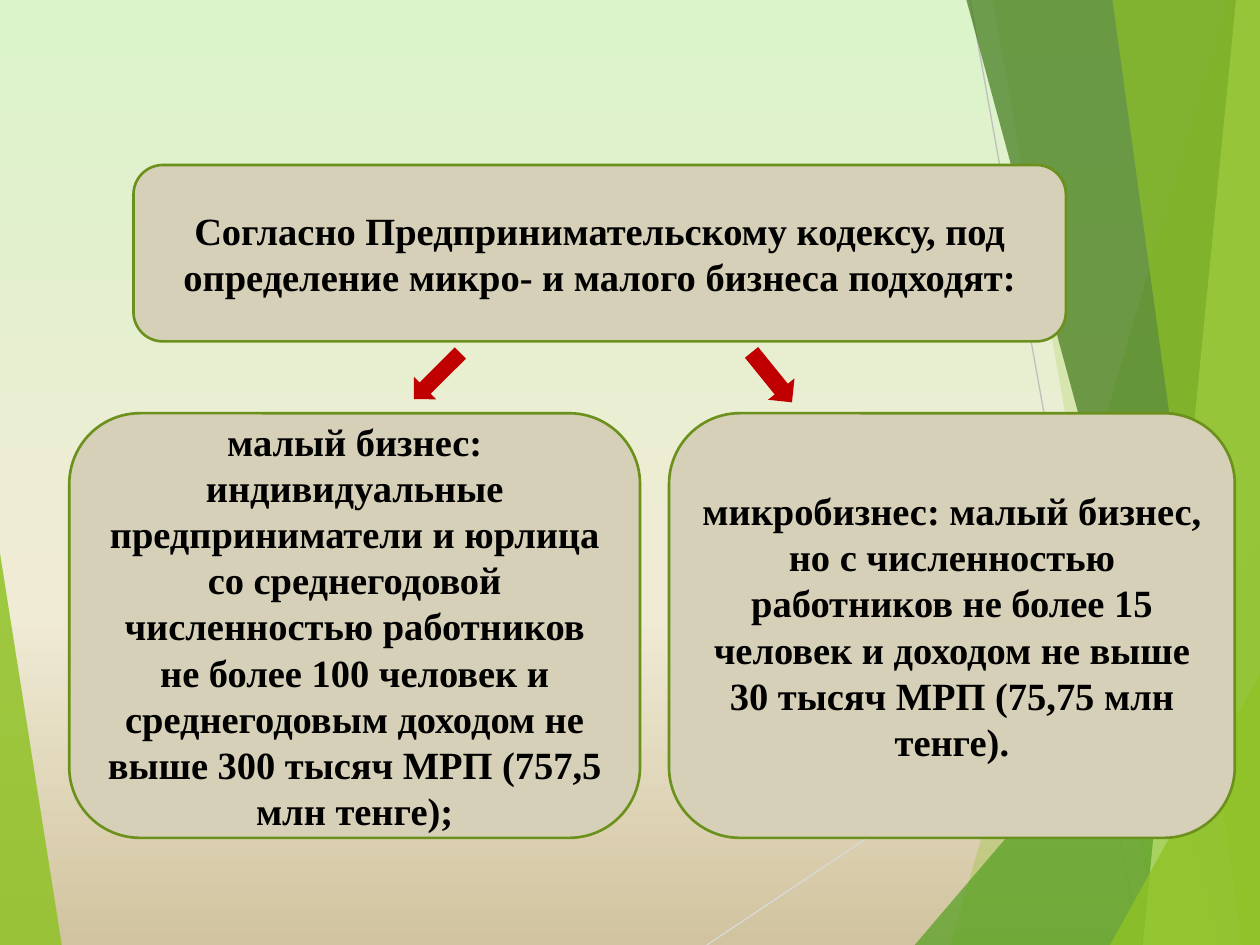
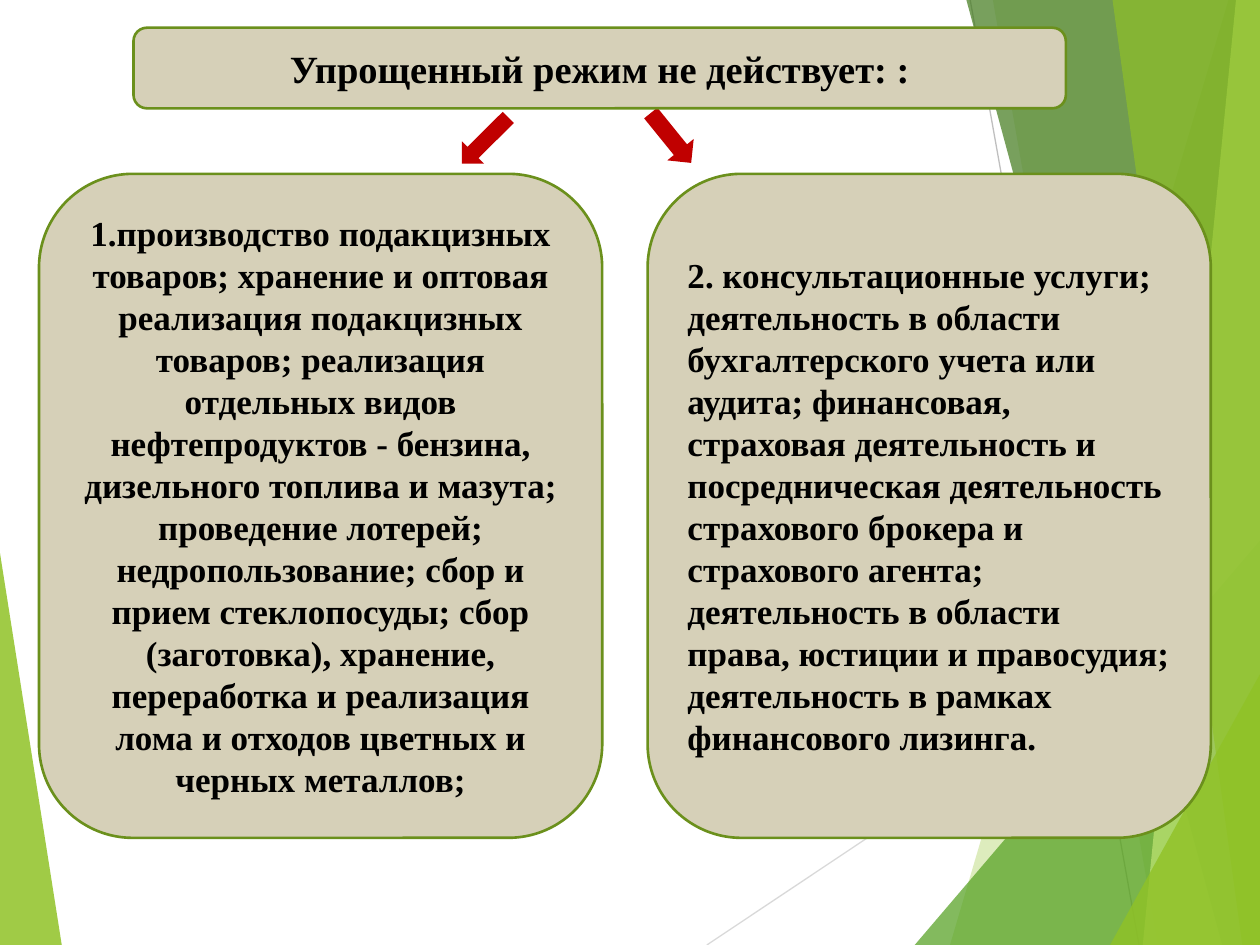
from lxml import etree
from pptx import Presentation, util as u
from pptx.dml.color import RGBColor
from pptx.enum import shapes, text
from pptx.oxml import ns

SLIDE_W, SLIDE_H = 10, 7.5
LIME = RGBColor(0x90, 0xC2, 0x26)
PALE_LIME = RGBColor(0xC0, 0xE4, 0x74)
GREEN = RGBColor(0x54, 0xA0, 0x21)
DARK_GREEN = RGBColor(0x3F, 0x78, 0x19)
LIGHT_GREY = RGBColor(0xD9, 0xD9, 0xD9)
GREY = RGBColor(0xBF, 0xBF, 0xBF)
SAND = RGBColor(0xD6, 0xD0, 0xB8)
OLIVE = RGBColor(0x6B, 0x90, 0x1C)
RED = RGBColor(0xC0, 0x00, 0x00)
BLACK = RGBColor(0x00, 0x00, 0x00)
WHITE = RGBColor(0xFF, 0xFF, 0xFF)
MEADOW = [
    (0, RGBColor(0xDB, 0xF4, 0xCA)),
    (0.65, RGBColor(0xF0, 0xEB, 0xD5)),
    (1, RGBColor(0xD1, 0xC3, 0x9F)),
]

BODY_FONT = {"name": "Times New Roman", "bold": True}
HEADING_SIZE = 22
HEADING_LEFT, HEADING_WIDTH = 1.06, 7.4
PANEL_BOTTOM = 6.65
CENTER, LEFT = text.PP_ALIGN.CENTER, text.PP_ALIGN.LEFT

LEFT_WEDGE = ([(0, 4.39), (0.49, SLIDE_H), (0, SLIDE_H)], LIME, 85)
RAYS = [
    ((5.61, SLIDE_H), (SLIDE_W, 4.57), LIGHT_GREY),
    ((7.7, 0), (9.04, SLIDE_H), GREY),
]
RIGHT_RIBBONS = [
    (9.75, 7.54, LIME, 30),
    (7.88, 9.19, LIME, 20),
    ((4.29), 7.26, GREEN, 72),
    (7.67, 9.7, DARK_GREEN, 70),
    (9.81, 9.07, PALE_LIME, 70),
    (8.83, 9.86, LIME, 65),
    (5.35, 8.81, LIME, 80),
]


def ribbon_outline(start, foot):
    """Return a right-edge band from the top, or a wedge if start is a height on the edge."""
    corner = (SLIDE_W, SLIDE_H)
    if start < SLIDE_H - 1.5:
        return [(SLIDE_W, start), corner, (foot, SLIDE_H)]
    return [(start, 0), (SLIDE_W, 0), corner, (foot, SLIDE_H)]


def paint(shape, color):
    """Give a shape a flat fill without outline or shadow."""
    shape.shadow.inherit = False
    shape.fill.solid()
    shape.fill.fore_color.rgb = color
    shape.line.fill.background()


def add_ribbon(slide, outline, color, opacity):
    """Draw a translucent polygon."""
    corners = [(u.Inches(x), u.Inches(y)) for x, y in outline]
    builder = slide.shapes.build_freeform(*corners[0])
    builder.add_line_segments(corners[1:], close=True)
    ribbon = builder.convert_to_shape()
    paint(ribbon, color)
    tint = ribbon.element.spPr.find(".//" + ns.qn("a:srgbClr"))
    etree.SubElement(tint, ns.qn("a:alpha"), val=str(opacity * 1000))


def add_ray(slide, start, end, color):
    """Draw a thin straight line."""
    ends = [u.Inches(value) for value in (*start, *end)]
    ray = slide.shapes.add_connector(shapes.MSO_CONNECTOR.STRAIGHT, *ends)
    ray.line.color.rgb = color
    ray.line.width = u.Pt(0.75)
    etree.SubElement(ray.element.spPr, ns.qn("a:effectLst"))


def add_decor(slide):
    """Draw the rays and green ribbons shared by all slides."""
    add_ribbon(slide, *LEFT_WEDGE)
    for ray in RAYS:
        add_ray(slide, *ray)
    for start, foot, color, opacity in RIGHT_RIBBONS:
        add_ribbon(slide, ribbon_outline(start, foot), color, opacity)


def add_meadow_background(slide):
    """Fill the background with a vertical three-colour gradient."""
    fill = slide.background.fill
    fill.gradient()
    fill.gradient_angle = 270
    stop_list = slide.element.find(".//" + ns.qn("a:gsLst"))
    etree.SubElement(stop_list, ns.qn("a:gs"), pos="100000")
    for stop, (position, color) in zip(fill.gradient_stops, MEADOW):
        stop.position = position
        stop.color.rgb = color


def add_plain_background(slide):
    """Fill the background with white."""
    slide.background.fill.solid()
    slide.background.fill.fore_color.rgb = WHITE


def add_panel(slide, box, wording, size=HEADING_SIZE, align=CENTER):
    """Draw a rounded sand panel with bold text."""
    panel = slide.shapes.add_shape(
        shapes.MSO_SHAPE.ROUNDED_RECTANGLE, *map(u.Inches, box))
    paint(panel, SAND)
    panel.line.color.rgb = OLIVE
    panel.line.width = u.Pt(1.5)
    frame = panel.text_frame
    frame.word_wrap = True
    frame.vertical_anchor = text.MSO_ANCHOR.MIDDLE
    paragraph = frame.paragraphs[0]
    paragraph.alignment = align
    run = paragraph.add_run()
    run.text = wording
    for attribute, value in {**BODY_FONT, "size": u.Pt(size)}.items():
        setattr(run.font, attribute, value)
    run.font.color.rgb = BLACK


def add_arrow(slide, box, rotation):
    """Draw a red arrow turned towards a panel."""
    arrow = slide.shapes.add_shape(
        shapes.MSO_SHAPE.LEFT_ARROW, *map(u.Inches, box))
    paint(arrow, RED)
    arrow.rotation = rotation


def add_split(slide, heading, heading_span, panel_top, panels, arrow_spots, size):
    """Lay out a heading with two arrows leading to two panels."""
    for left, width, wording, align in panels:
        box = (left, panel_top, width, PANEL_BOTTOM - panel_top)
        add_panel(slide, box, wording, size, align)
    to_left, to_right = arrow_spots
    add_arrow(slide, (*to_left, 0.52, 0.25), 315.2)
    add_arrow(slide, (*to_right, 0.51, 0.27), 231)
    top, height = heading_span
    add_panel(slide, (HEADING_LEFT, top, HEADING_WIDTH, height), heading)


def add_slide(deck, add_background):
    """Add a blank slide with its background and the shared decor."""
    slide = deck.slides.add_slide(deck.slide_layouts[6])
    add_background(slide)
    add_decor(slide)
    return slide


def main():
    """Build and save the deck."""
    deck = Presentation()
    deck.slide_width, deck.slide_height = u.Inches(SLIDE_W), u.Inches(SLIDE_H)

    small_business = (
        "малый бизнес: индивидуальные предприниматели и юрлица со среднегодовой "
        "численностью работников не более 100 человек и среднегодовым доходом "
        "не выше 300 тысяч МРП (757,5 млн тенге);")
    micro_business = (
        "микробизнес: малый бизнес, но с численностью работников не более 15 "
        "человек и доходом не выше 30 тысяч МРП (75,75 млн тенге).")
    add_split(
        add_slide(deck, add_meadow_background),
        "Согласно Предпринимательскому кодексу, под определение микро- и малого "
        "бизнеса подходят:",
        (1.31, 1.4), 3.28,
        [(0.55, 4.53, small_business, CENTER), (5.31, 4.49, micro_business, CENTER)],
        [(3.21, 2.86), (5.87, 2.86)], 22)

    goods = (
        "1.производство подакцизных товаров; хранение и оптовая реализация "
        "подакцизных товаров; реализация отдельных видов нефтепродуктов - бензина, "
        "дизельного топлива и мазута; проведение лотерей; недропользование; сбор и "
        "прием стеклопосуды; сбор (заготовка), хранение, переработка и реализация "
        "лома и отходов цветных и черных металлов;")
    services = (
        "2. консультационные услуги; деятельность в области бухгалтерского учета "
        "или аудита; финансовая, страховая деятельность и посредническая "
        "деятельность страхового брокера и страхового агента; деятельность в "
        "области права, юстиции и правосудия; деятельность в рамках финансового "
        "лизинга.")
    add_split(
        add_slide(deck, add_plain_background),
        "Упрощенный режим не действует: :",
        (0.22, 0.64), 1.38,
        [(0.31, 4.47, goods, CENTER), (5.14, 4.47, services, LEFT)],
        [(3.59, 0.99), (5.07, 0.96)], 20)

    deck.save("out.pptx")


if __name__ == "__main__":
    main()
